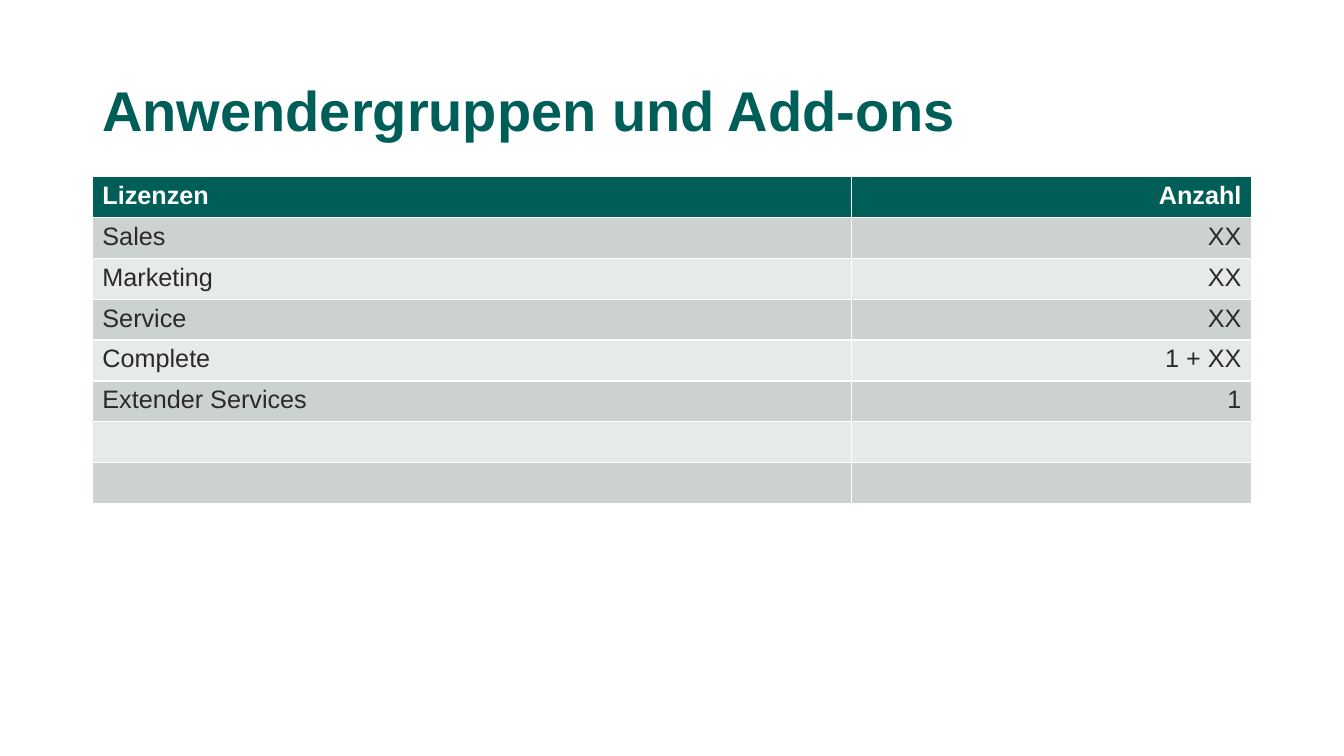
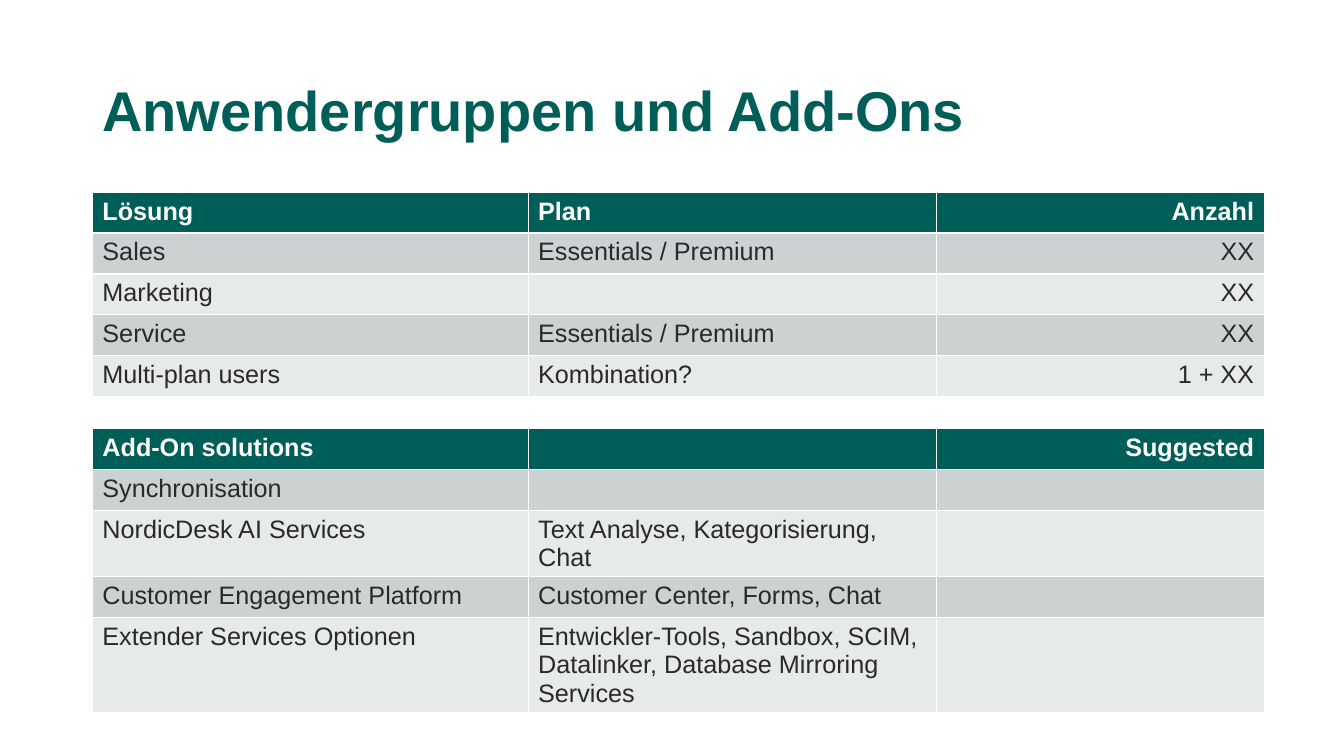
from pptx import Presentation
from pptx.dml.color import RGBColor
from pptx.enum.text import MSO_ANCHOR, PP_ALIGN
from pptx.util import Emu, Pt

PX = 9525  # 96 px to the inch
FONT = "Arial"
GREEN, WHITE, DARK = "005E58", "FFFFFF", "2B2929"
BANDS = ["CCD2D1", "E7EAEA"]
LEFT, TITLE_TOP, TITLE_WIDTH, TITLE_HEIGHT = 88, 63, 1104, 89
ROW_HEIGHT = 39

# Each table: top, column widths, rows (the first one is the header)
SLIDES = [
    ("Anwendergruppen und Add-ons", [
        (168, [723, 381], [
            ["Lizenzen", "Anzahl"],
            ["Sales", "XX"],
            ["Marketing", "XX"],
            ["Service", "XX"],
            ["Complete", "1 + XX"],
            ["Extender Services", "1"],
            ["", ""],
            ["", ""],
        ]),
    ]),
    ("Anwendergruppen und Add-Ons", [
        (183, [415, 389, 312], [
            ["Lösung", "Plan", "Anzahl"],
            ["Sales", "Essentials / Premium", "XX"],
            ["Marketing", "", "XX"],
            ["Service", "Essentials / Premium", "XX"],
            ["Multi-plan users", "Kombination?", "1 + XX"],
        ]),
        (408, [415, 389, 312], [
            ["Add-On solutions", "", "Suggested"],
            ["Synchronisation", "", ""],
            ["NordicDesk AI Services", "Text Analyse, Kategorisierung, Chat", ""],
            ["Customer Engagement Platform", "Customer Center, Forms, Chat", ""],
            ["Extender Services Optionen",
             "Entwickler-Tools, Sandbox, SCIM, Datalinker, Database Mirroring Services", ""],
        ]),
    ]),
]


def color(value):
    return RGBColor.from_string(value)


def format_text(paragraph, size, text_color, bold, alignment):
    paragraph.alignment = alignment
    for span in paragraph.runs:
        span.font.name = FONT
        span.font.size = Pt(size)
        span.font.bold = bold
        span.font.color.rgb = color(text_color)


deck = Presentation()
deck.slide_width, deck.slide_height = Emu(1280 * PX), Emu(720 * PX)
title_only = deck.slide_layouts[5]

for heading, tables in SLIDES:
    page = deck.slides.add_slide(title_only)
    title = page.shapes.title
    title.left, title.top = Emu(LEFT * PX), Emu(TITLE_TOP * PX)
    title.width, title.height = Emu(TITLE_WIDTH * PX), Emu(TITLE_HEIGHT * PX)
    title.text_frame.text = heading
    title.text_frame.vertical_anchor = MSO_ANCHOR.MIDDLE
    paragraph = title.text_frame.paragraphs[0]
    paragraph.line_spacing = 0.9
    format_text(paragraph, 40, GREEN, True, PP_ALIGN.LEFT)

    for top, widths, rows in tables:
        frame = page.shapes.add_table(
            len(rows), len(widths), Emu(LEFT * PX), Emu(top * PX),
            Emu(sum(widths) * PX), Emu(len(rows) * ROW_HEIGHT * PX))
        table = frame.table
        for column, width in zip(table.columns, widths):
            column.width = Emu(width * PX)
        for row_index, texts in enumerate(rows):
            table.rows[row_index].height = Emu(ROW_HEIGHT * PX)
            is_header = row_index == 0
            fill = GREEN if is_header else BANDS[(row_index - 1) % 2]
            for column_index, text in enumerate(texts):
                cell = table.cell(row_index, column_index)
                cell.fill.solid()
                cell.fill.fore_color.rgb = color(fill)
                cell.text_frame.text = text
                is_last = column_index == len(widths) - 1
                format_text(cell.text_frame.paragraphs[0], 18,
                            WHITE if is_header else DARK, is_header,
                            PP_ALIGN.RIGHT if is_last else PP_ALIGN.LEFT)

deck.save("out.pptx")
